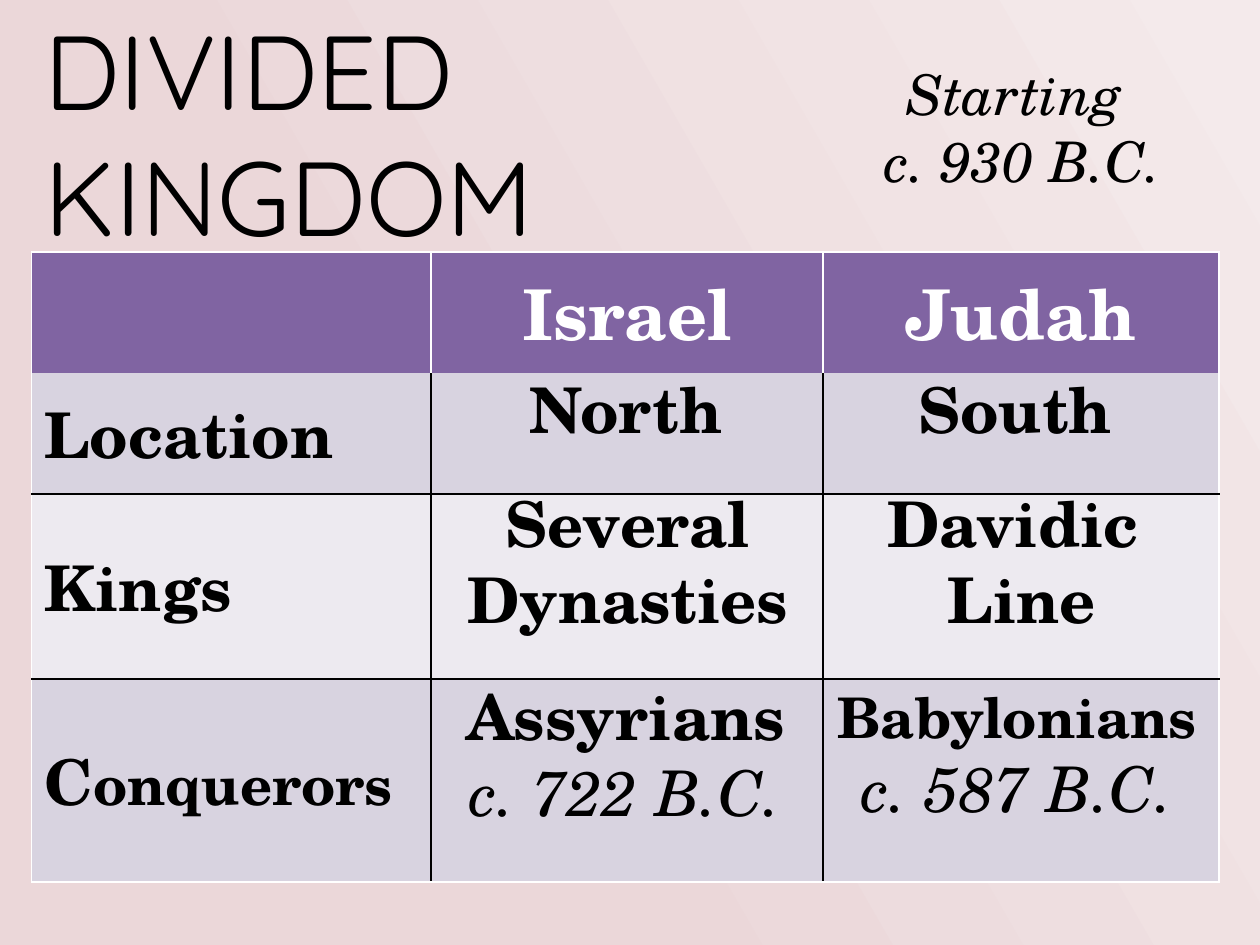
from lxml import etree
from pptx import Presentation
from pptx.dml.color import RGBColor
from pptx.enum import text
from pptx.oxml.ns import qn
from pptx.util import Cm, Pt

BLACK = RGBColor(0x00, 0x00, 0x00)
WHITE = RGBColor(0xFF, 0xFF, 0xFF)
PURPLE = RGBColor(0x80, 0x64, 0xA2)
LILAC = RGBColor(0xD8, 0xD3, 0xE0)
PALE_LILAC = RGBColor(0xED, 0xEA, 0xF0)
PINK_LIGHT = RGBColor(0xF4, 0xEA, 0xEB)
PINK = RGBColor(0xEB, 0xD7, 0xD9)

SERIF = "TeX Gyre Schola"
NO_STYLE = "{2D5ABB26-0587-4C30-8999-92F81FD0307C}"

COL_WIDTHS = (8.05, 7.9, 7.98)
ROW_HEIGHTS = (2.44, 2.44, 3.73, 4.09)
ROW_FILLS = (PURPLE, LILAC, PALE_LILAC, LILAC)
HEADERS = ("", "Israel", "Judah")
# Each label is a list of (text, size) runs
LABELS = (
    [("Location", 36)],
    [("Kings", 36)],
    [("C", 36), ("onquerors", 32)],
)
# Offset from the table corner, width and height in cm, then
# paragraphs of (text, size, italic)
ANSWERS = (
    (7.95, 2.26, 8.05, 1.8, [("North", 36, False)]),
    (15.8, 2.26, 8.05, 1.8, [("South", 36, False)]),
    (7.95, 4.57, 8.13, 3.33, [("Several Dynasties", 36, False)]),
    (16.0, 4.57, 7.92, 3.33, [("Davidic \vLine", 36, False)]),
    (7.95, 8.46, 8.05, 3.33, [("Assyrians", 36, False), ("c. 722 B.C.", 36, True)]),
    (15.8, 8.56, 8.13, 3.18, [("Babylonians", 32, False), ("c. 587 B.C.", 36, True)]),
)


def format_font(font, size, color=BLACK, bold=False, italic=False, name=SERIF):
    font.name, font.size = name, Pt(size)
    font.bold, font.italic = bold, italic
    font.color.rgb = color


def set_background(slide):
    fill = slide.background.fill
    fill.gradient()
    fill.gradient_angle = 210
    for stop, color, position in zip(fill.gradient_stops, (PINK_LIGHT, PINK), (0, 0.65)):
        stop.color.rgb = color
        stop.position = position


def add_title(slide, left, top, width, height):
    title = slide.shapes.title
    title.left, title.top, title.width, title.height = map(Cm, (left, top, width, height))
    tf = title.text_frame
    tf.text = "DIVIDED KINGDOM"
    tf.auto_size = text.MSO_AUTO_SIZE.NONE
    tf.vertical_anchor = text.MSO_ANCHOR.MIDDLE
    p = tf.paragraphs[0]
    p.alignment = text.PP_ALIGN.LEFT
    format_font(p.runs[0].font, 60, name="Quicksand")


def add_centred_text(slide, left, top, width, height, lines):
    """Add one paragraph for each (text, size, italic); upright lines are bold."""
    tf = slide.shapes.add_textbox(*map(Cm, (left, top, width, height))).text_frame
    tf.word_wrap = True
    tf.auto_size = text.MSO_AUTO_SIZE.SHAPE_TO_FIT_TEXT
    for i, (line, size, italic) in enumerate(lines):
        p = tf.paragraphs[0] if i == 0 else tf.add_paragraph()
        p.text = line
        p.alignment = text.PP_ALIGN.CENTER
        for r in p.runs:
            format_font(r.font, size, bold=not italic, italic=italic)


def set_borders(cell, row, col):
    """White outside and in the header, black between the body cells."""
    last_row, last_col = len(ROW_HEIGHTS) - 1, len(COL_WIDTHS) - 1
    inner = WHITE if row == 0 else BLACK
    borders = {
        "a:lnL": WHITE if col == 0 else inner,
        "a:lnR": WHITE if col == last_col else inner,
        "a:lnT": {0: WHITE, 1: None}.get(row, BLACK),
        "a:lnB": {0: None, last_row: WHITE}.get(row, BLACK),
    }
    tc_pr = cell._tc.get_or_add_tcPr()
    for tag, color in borders.items():
        if color is not None:
            ln = etree.SubElement(tc_pr, qn(tag), w=str(Pt(1)))
            fill = etree.SubElement(ln, qn("a:solidFill"))
            etree.SubElement(fill, qn("a:srgbClr"), val=str(color))


def add_kingdom_table(slide, left, top):
    frame = slide.shapes.add_table(
        len(ROW_HEIGHTS), len(COL_WIDTHS), Cm(left), Cm(top),
        Cm(sum(COL_WIDTHS)), Cm(sum(ROW_HEIGHTS)))
    table = frame.table
    table._tbl.tblPr.find(qn("a:tableStyleId")).text = NO_STYLE
    for column, width in zip(table.columns, COL_WIDTHS):
        column.width = Cm(width)
    for i, (row, height) in enumerate(zip(table.rows, ROW_HEIGHTS)):
        row.height = Cm(height)
        for j, cell in enumerate(row.cells):
            set_borders(cell, i, j)
            cell.fill.solid()
            cell.fill.fore_color.rgb = ROW_FILLS[i]
            cell.vertical_anchor = text.MSO_ANCHOR.MIDDLE

    for j, header in enumerate(HEADERS):
        if header:
            p = table.cell(0, j).text_frame.paragraphs[0]
            p.text = header
            p.alignment = text.PP_ALIGN.CENTER
            format_font(p.runs[0].font, 40, WHITE, bold=True)
    for i, label in enumerate(LABELS, 1):
        p = table.cell(i, 0).text_frame.paragraphs[0]
        for part, size in label:
            r = p.add_run()
            r.text = part
            format_font(r.font, size, bold=True)

    for x, y, width, height, lines in ANSWERS:
        add_centred_text(slide, left + x, top + y, width, height, lines)


def main():
    prs = Presentation()
    prs.slide_width, prs.slide_height = Cm(25.4), Cm(19.05)
    slide = prs.slides.add_slide(prs.slide_layouts[5])
    set_background(slide)
    add_title(slide, 0.64, 1.07, 16.51, 3.18)
    add_centred_text(slide, 16.71, 1.07, 7.82, 3, [("Starting \vc. 930 B.C.", 32, True)])
    add_kingdom_table(slide, 0.64, 5.08)
    prs.save("out.pptx")


if __name__ == "__main__":
    main()
